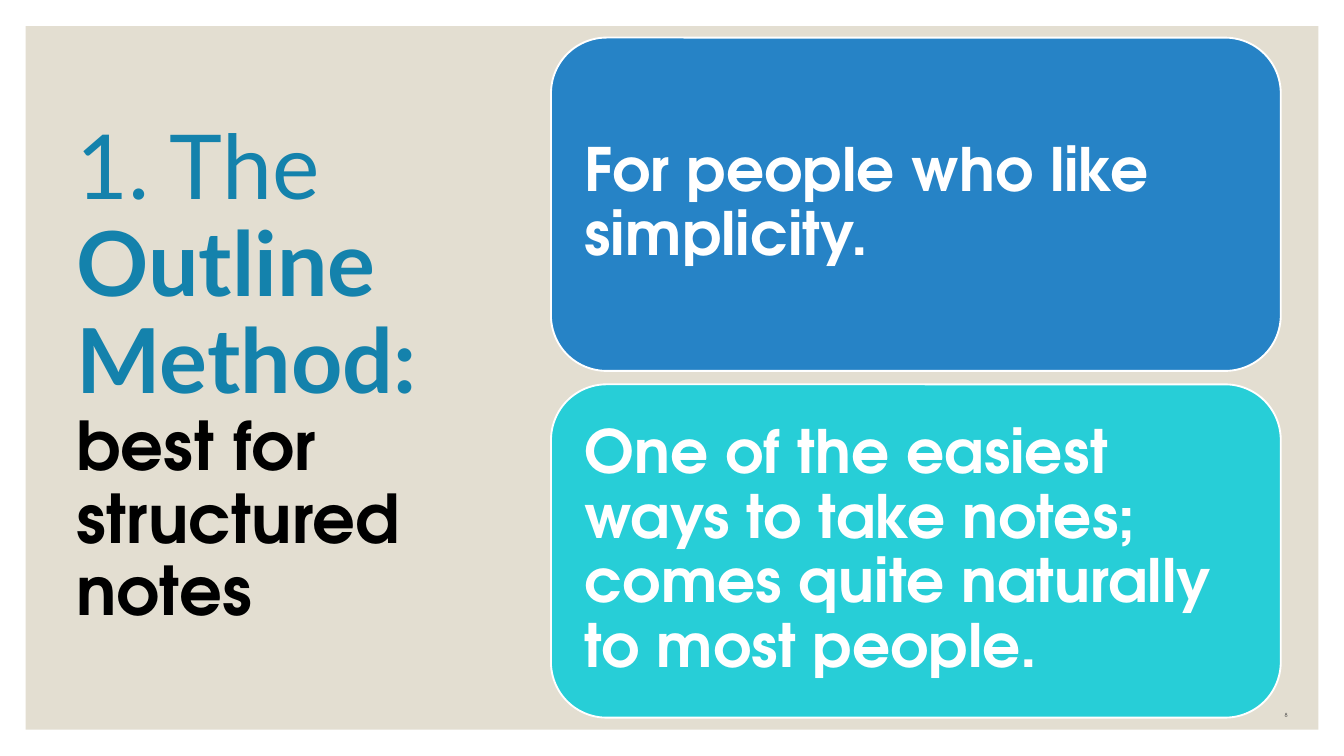
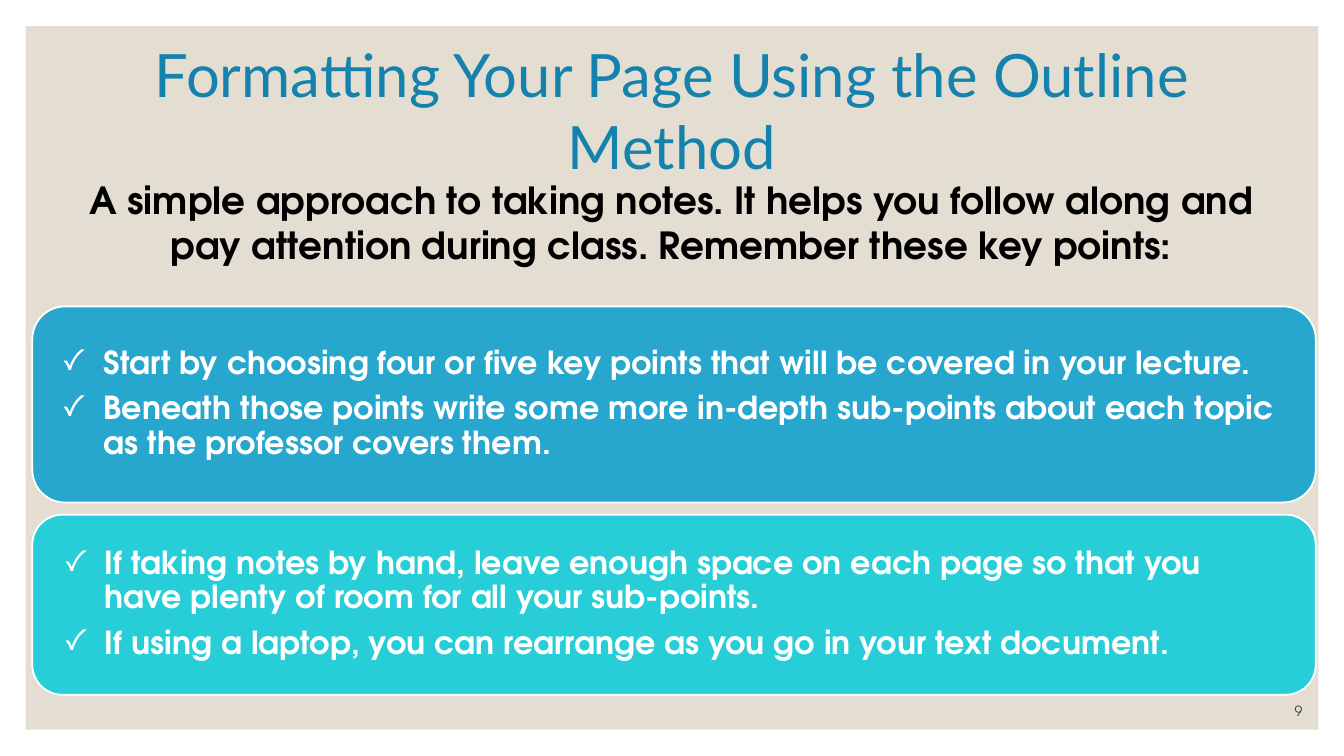
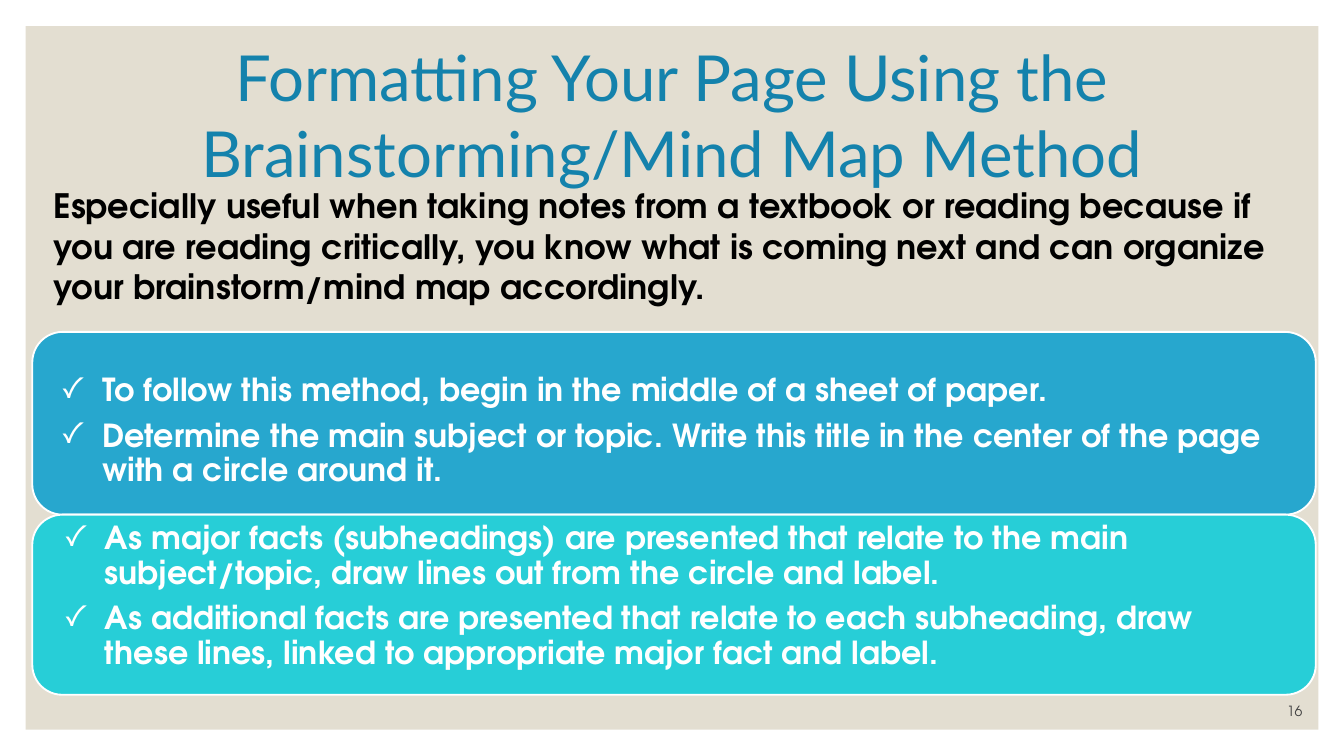
from lxml.etree import SubElement
from pptx import Presentation
from pptx.dml.color import RGBColor
from pptx.enum.shapes import MSO_SHAPE
from pptx.enum.text import MSO_ANCHOR, MSO_AUTO_SIZE, PP_ALIGN
from pptx.oxml.ns import qn
from pptx.util import Inches, Pt

# Shared style
HEAD, BODY = "Lato", "TeX Gyre Adventor"
SAND, TEAL, BLUE, SKY, AQUA = "E3DED1", "1482AC", "2683C6", "27A7CE", "27CED7"
WHITE, BLACK, GREY = "FFFFFF", "000000", "404040"
LEFT, CENTER, RIGHT = PP_ALIGN.LEFT, PP_ALIGN.CENTER, PP_ALIGN.RIGHT
TOP, MIDDLE, BOTTOM = MSO_ANCHOR.TOP, MSO_ANCHOR.MIDDLE, MSO_ANCHOR.BOTTOM
COLUMNS = 100  # square grid cells across the slide


def rgb(hex_color):
    return RGBColor.from_string(hex_color)


def write(p, text, size=18, color=BLACK, font=BODY, bold=False):
    r = p.add_run()
    r.text = text
    r.font.size, r.font.name, r.font.bold = Pt(size), font, bold
    r.font.color.rgb = rgb(color)


def add_check(p, indent=Inches(0.31)):
    pPr = p._p.get_or_add_pPr()
    pPr.set("marL", str(indent))
    pPr.set("indent", str(-indent))
    SubElement(pPr, qn("a:buFont")).set("typeface", BODY)
    SubElement(pPr, qn("a:buChar")).set("char", "✓")


class Deck:
    def __init__(self):
        self.prs = Presentation()
        self.prs.slide_width = Inches(10)
        self.prs.slide_height = self.prs.slide_width * 9 // 16
        self.cell = self.prs.slide_width / COLUMNS
        self.s = None

    def grid(self, box):
        return [round(v * self.cell) for v in box]

    def slide(self, number, number_box=(85.9, 51.7, 12, 2.3), number_size=7.5):
        """Start a slide with its background panel and page number."""
        self.s = self.prs.slides.add_slide(self.prs.slide_layouts[5])
        panel = self.shape(MSO_SHAPE.RECTANGLE, (1.9, 1.95, 96.2, 52.35), SAND)
        self.s.shapes.element.insert(2, panel.element)  # behind the title
        self.text(number_box, [str(number)], anchor=BOTTOM, align=RIGHT,
                  size=number_size, color=GREY)

    def shape(self, kind, box, fill, line=None):
        sp = self.s.shapes.add_shape(kind, *self.grid(box))
        sp.shadow.inherit = False
        sp.fill.solid()
        sp.fill.fore_color.rgb = rgb(fill)
        if line:
            sp.line.color.rgb, sp.line.width = rgb(line), Pt(1)
        else:
            sp.line.fill.background()
        return sp

    def frame(self, sp, anchor, inset=None):
        tf = sp.text_frame
        tf.word_wrap, tf.auto_size = True, MSO_AUTO_SIZE.NONE
        tf.vertical_anchor = anchor
        if inset is not None:
            tf.margin_left = tf.margin_right = Inches(inset)
            tf.margin_top = tf.margin_bottom = Inches(inset)
        return tf

    def title(self, box, runs, anchor=TOP, align=CENTER, spacing=1.0):
        """Fill the title placeholder with (text, format) runs."""
        sp = self.s.shapes.title
        sp.left, sp.top, sp.width, sp.height = self.grid(box)
        p = self.frame(sp, anchor).paragraphs[0]
        p.alignment, p.line_spacing = align, spacing
        for text, fmt in runs:
            write(p, text, **{"font": HEAD, "color": TEAL, **fmt})

    def text(self, box, lines, anchor=TOP, align=LEFT, inset=None,
             spacing=1.0, after=0, checks=False, **fmt):
        tf = self.frame(self.s.shapes.add_textbox(*self.grid(box)), anchor, inset)
        for i, line in enumerate(lines):
            p = tf.add_paragraph() if i else tf.paragraphs[0]
            p.alignment, p.line_spacing, p.space_after = align, spacing, Pt(after)
            if checks:
                add_check(p)
            write(p, line, **fmt)

    def card(self, box, fill, text_box, lines, size=17, inset=0.07, checks=True):
        """Rounded card with white bold text."""
        self.shape(MSO_SHAPE.ROUNDED_RECTANGLE, box, fill, WHITE)
        self.text(text_box, lines, anchor=MIDDLE, inset=inset, spacing=0.9,
                  after=round(size * 0.35), checks=checks, size=size,
                  color=WHITE, bold=True)


def main():
    deck = Deck()

    # Slide 1: the outline method
    deck.slide(8, number_box=(90, 51.7, 6.8, 2.3), number_size=3)
    deck.title((4.7, 4.6, 30.9, 46.8), [
        ("1. The ", dict(size=48)),
        ("Outline Method: ", dict(size=48, bold=True)),
        ("best for structured notes",
         dict(size=36, font=BODY, color=BLACK, bold=True)),
    ], anchor=MIDDLE, align=LEFT, spacing=0.9)
    reasons = [
        (BLUE, "For people who like simplicity."),
        (AQUA, "One of the easiest ways to take notes; comes quite naturally "
               "to most people."),
    ]
    for i, (fill, reason) in enumerate(reasons):
        y = 2.8 + i * 25.8
        deck.card((41, y, 54.3, 24.8), fill, (42.2, y + 1.2, 51.9, 22.4),
                  [reason], size=32, inset=0.13, checks=False)

    # Slide 2: formatting with the outline method
    lower_card = (2.4, 38.3, 95.5, 13.4)
    deck.slide(9)
    deck.title((4.7, 2.3, 90.6, 11.8),
               [("Formatting Your Page Using the Outline Method", dict(size=32))])
    deck.text((3, 12.7, 93.9, 7.7), [
        "A simple approach to taking notes. It helps you follow along and pay "
        "attention during class. Remember these key points:",
    ], align=CENTER, size=20, bold=True)
    deck.card((2.4, 22.8, 95.5, 14.6), SKY, (3.9, 23.5, 92.4, 13.1), [
        "Start by choosing four or five key points that will be covered in "
        "your lecture.",
        "Beneath those points write some more in-depth sub-points about each "
        "topic as the professor covers them.",
    ])
    deck.card(lower_card, AQUA, (4, 38.9, 92.2, 12.1), [
        "If taking notes by hand, leave enough space on each page so that you "
        "have plenty of room for all your sub-points.",
        "If using a laptop, you can rearrange as you go in your text document.",
    ])

    # Slide 3: formatting with the brainstorming method
    deck.slide(16)
    deck.title((4.7, 2.3, 90.6, 12.5), [
        ("Formatting Your Page Using the Brainstorming/Mind Map Method",
         dict(size=34)),
    ])
    deck.text((3, 13.3, 93.9, 10.1), [
        "Especially useful when taking notes from a textbook or reading because "
        "if you are reading critically, you know what is coming next and can "
        "organize your brainstorm/mind map accordingly.",
    ], size=18, bold=True)
    deck.card((2.4, 24.7, 95.5, 13.6), SKY, (3.8, 26.6, 92.4, 11), [
        "To follow this method, begin in the middle of a sheet of paper.",
        "Determine the main subject or topic. Write this title in the center "
        "of the page with a circle around it.",
    ])
    deck.card(lower_card, AQUA, (4, 37.3, 92.2, 14.2), [
        "As major facts (subheadings) are presented that relate to the main "
        "subject/topic, draw lines out from the circle and label.",
        "As additional facts are presented that relate to each subheading, draw "
        "these lines, linked to appropriate major fact and label.",
    ])

    deck.prs.save("out.pptx")


if __name__ == "__main__":
    main()
